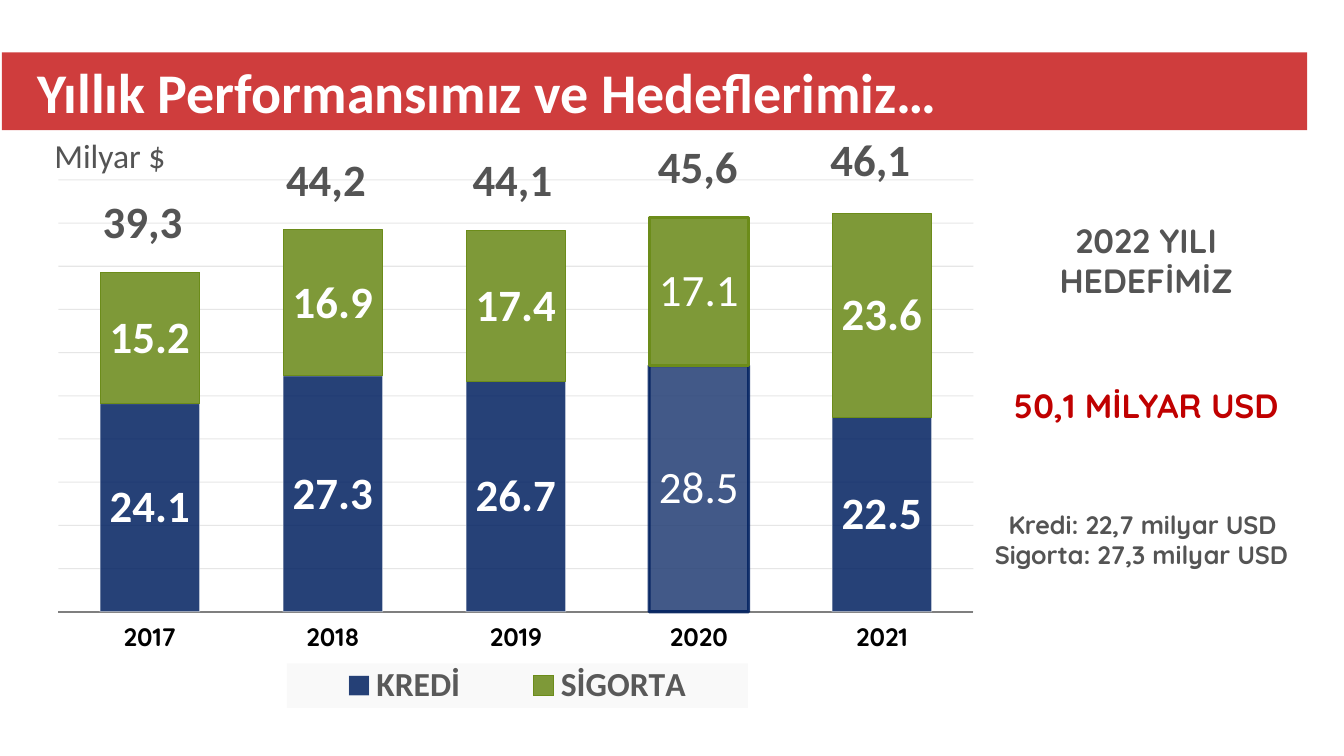
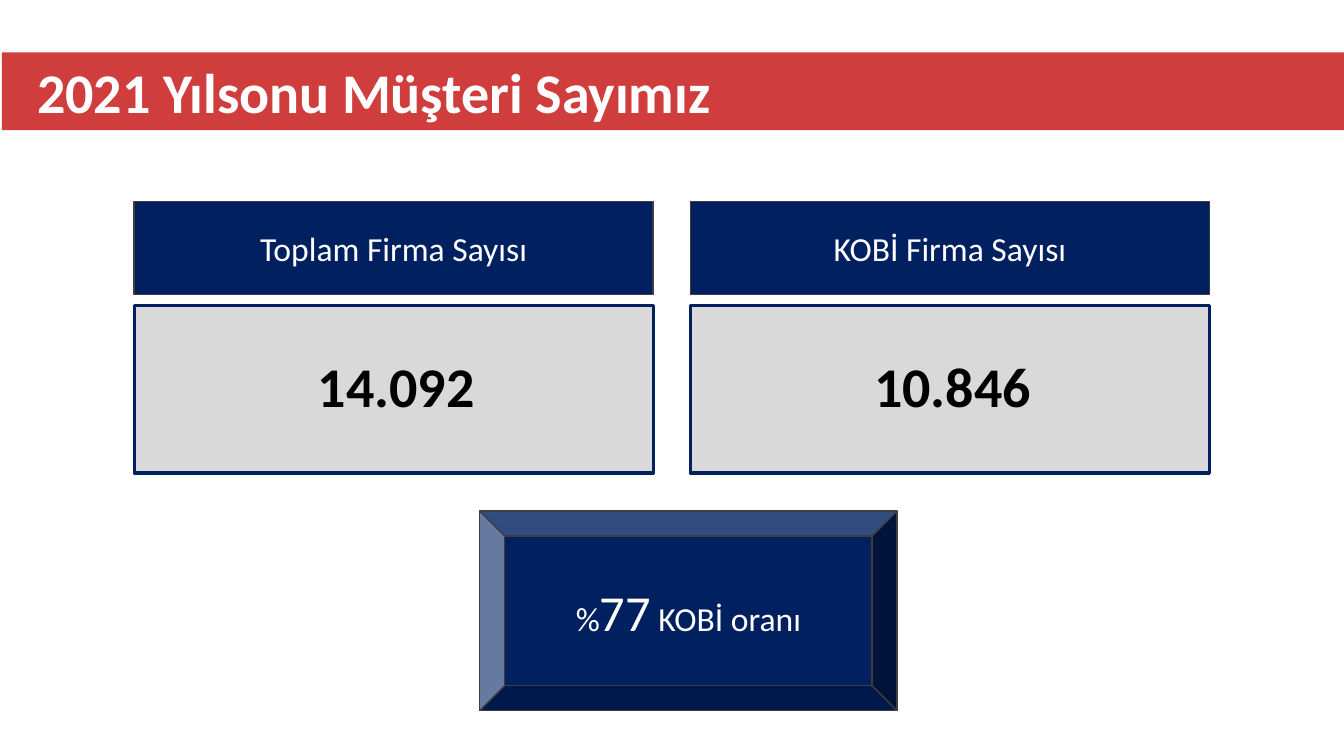
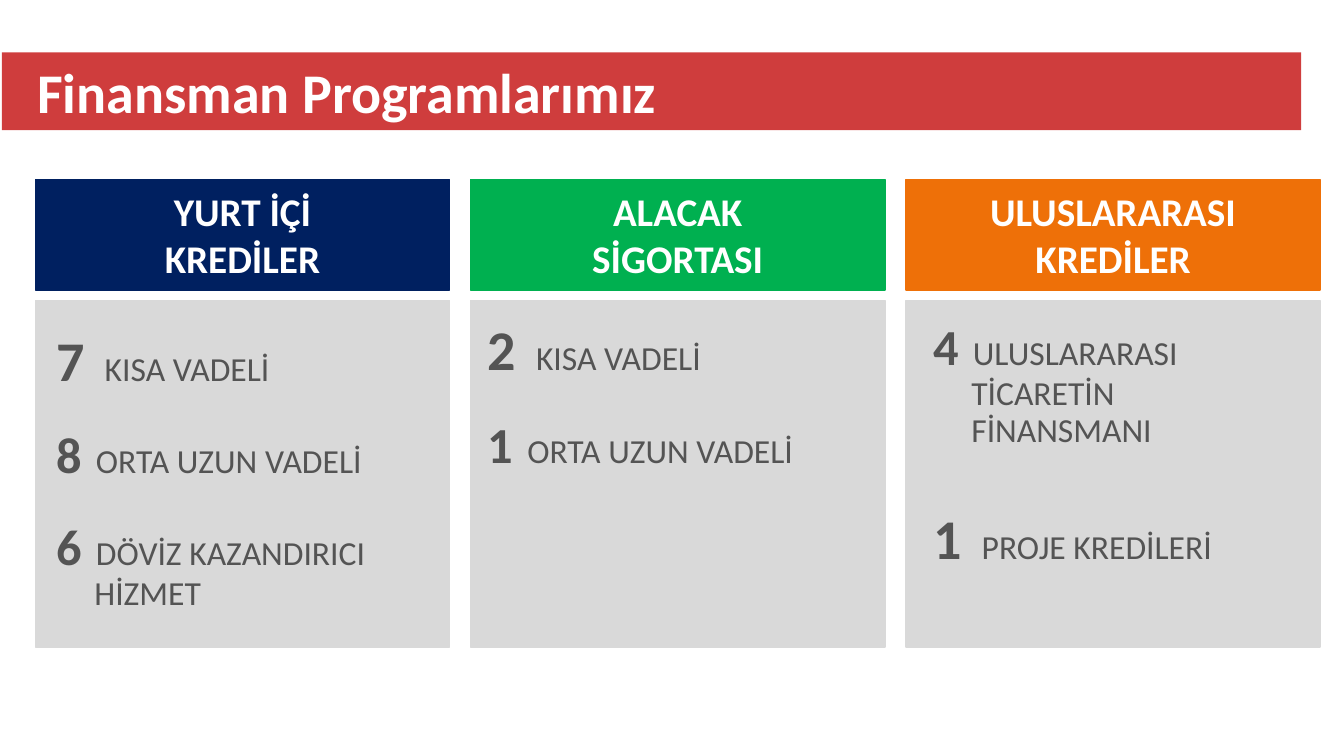
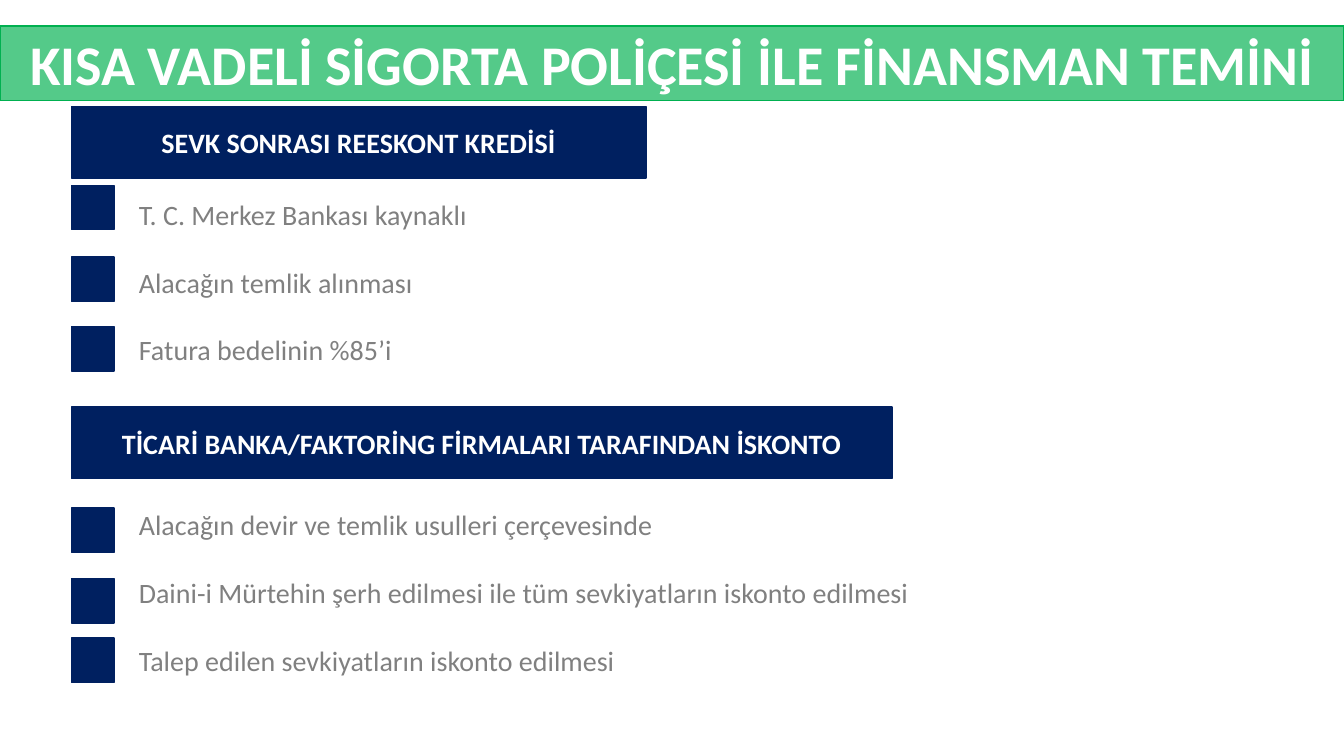
"""Build four slides on yearly results, customers, programmes and policy financing."""
from lxml.etree import SubElement
from pptx import Presentation
from pptx.chart.data import CategoryChartData
from pptx.dml.color import RGBColor
from pptx.enum.chart import (XL_CHART_TYPE, XL_LABEL_POSITION, XL_LEGEND_POSITION,
                             XL_TICK_LABEL_POSITION, XL_TICK_MARK)
from pptx.enum.shapes import MSO_SHAPE
from pptx.enum.text import MSO_ANCHOR, MSO_AUTO_SIZE, PP_ALIGN
from pptx.oxml import parse_xml
from pptx.oxml.ns import nsdecls, qn
from pptx.util import Cm, Pt

RED, NAVY, GREEN, ORANGE = "C00000", "002060", "00B050", "EE7008"
WHITE, BLACK, PALE, TEXT, GREY, EDGE = "FFFFFF", "000000", "D9D9D9", "545454", "808080", "3E3E3E"
BODY, ACCENT = "Calibri", "Quicksand"
TITLE_SIZE = 40

YEARS = ["2017", "2018", "2019", "2020", "2021"]
SERIES = [
    {"name": "KREDİ", "values": [24.1, 27.3, 26.7, 28.5, 22.5], "fill": (NAVY, 85),
     "line": (WHITE, 50), "point_fill": ("223D74", 85), "point_line": (NAVY, 85)},
    {"name": "SİGORTA", "values": [15.2, 16.9, 17.4, 17.1, 23.6], "fill": ("7E9938",),
     "line": ("6C8C1A",), "point_fill": ("7E9938",), "point_line": ("6C8C1A",)},
]
MARKED_YEAR = YEARS.index("2020")
TOTALS = [("39,3", 2.34, 4.9), ("44,2", 6.96, 3.84), ("44,1", 11.66, 3.84),
          ("45,6", 16.33, 3.53), ("46,1", 20.68, 3.35)]
GOAL = [
    {"text": "2022 YILI HEDEFİMİZ", "size": 24, "color": TEXT},
    {"text": "50,1 MİLYAR USD", "size": 24, "color": RED, "before": 60},
    {"text": "Kredi: 22,7 milyar USD", "size": 18, "color": TEXT, "before": 60,
     "align": PP_ALIGN.LEFT, "indent": 0.35},
    {"text": "Sigorta: 27,3 milyar USD", "size": 18, "color": TEXT, "align": PP_ALIGN.LEFT},
]
CUSTOMERS = [("Toplam Firma Sayısı", "14.092"), ("KOBİ Firma Sayısı", "10.846")]
SHARE = [("%", 24, False), ("77", 36, False), (" KOBİ oranı", 24, False)]
PROGRAMMES = [
    {"heading": ["YURT İÇİ", "KREDİLER"], "color": NAVY, "at": (1.17, 8.26), "gap": 26.4,
     "items": [("7", 40, ["KISA VADELİ"]), ("8", 36, ["ORTA UZUN VADELİ"]),
               ("6", 36, ["DÖVİZ KAZANDIRICI", "HİZMET"])]},
    {"heading": ["ALACAK", "SİGORTASI"], "color": GREEN, "at": (12.04, 8), "gap": 26.4,
     "items": [("2", 40, ["KISA VADELİ"]), ("1", 36, ["ORTA UZUN VADELİ"])]},
    {"heading": ["ULUSLARARASI KREDİLER"], "color": ORANGE, "at": (23.27, 8), "gap": 43.9,
     "items": [("4", 36, ["ULUSLARARASI", "TİCARETİN", "FİNANSMANI"]),
               ("1", 40, ["PROJE KREDİLERİ"])]},
]
TAB_BY_SIZE = {36: 1, 40: 1.22}
FINANCING = [
    {"heading": "SEVK SONRASI REESKONT KREDİSİ", "top": 2.69, "width": 14.48,
     "text_top": 4.85, "markers": [4.67, 6.48, 8.23],
     "lines": ["T. C. Merkez Bankası kaynaklı", "Alacağın temlik alınması",
               "Fatura bedelinin %85’i"]},
    {"heading": "TİCARİ BANKA/FAKTORİNG FİRMALARI TARAFINDAN İSKONTO", "top": 10.26,
     "width": 20.68, "text_top": 12.67, "markers": [12.8, 14.58, 16.08],
     "lines": ["Alacağın devir ve temlik usulleri çerçevesinde",
               "Daini-i Mürtehin şerh edilmesi ile tüm sevkiyatların iskonto edilmesi",
               "Talep edilen sevkiyatların iskonto edilmesi"]},
]


def paint(fill, color, alpha=None):
    fill.solid()
    fill.fore_color.rgb = RGBColor.from_string(color)
    if alpha:
        tone = fill._xPr.find(qn("a:solidFill"))[0]
        SubElement(tone, qn("a:alpha")).set("val", str(alpha * 1000))


def style_font(font, size, color, bold=False, name=BODY):
    font.name, font.bold = name, bold
    font.color.rgb = RGBColor.from_string(color)
    if size:
        font.size = Pt(size)


def write(frame, lines, size=None, color=WHITE, bold=False, name=BODY,
          align=PP_ALIGN.LEFT, spacing=1, gap=0):
    """Write strings or dicts as paragraphs; a dict may hold its own runs and settings."""
    frame.word_wrap = True
    for number, line in enumerate(lines):
        item = line if isinstance(line, dict) else {"text": line}
        para = frame.add_paragraph() if number else frame.paragraphs[0]
        para.alignment = item.get("align", align)
        para.line_spacing = spacing
        para.space_before = Pt(item.get("before", gap) if number else 0)
        properties = para._p.get_or_add_pPr()
        if "indent" in item:
            properties.set("marL", str(Cm(item["indent"])))
        if "tab" in item:
            stops = SubElement(properties, qn("a:tabLst"))
            stop = SubElement(stops, qn("a:tab"))
            stop.set("pos", str(Cm(item["tab"])))
            stop.set("algn", "l")
        runs = item.get("runs")
        style_font(para.font, None if runs else item.get("size", size),
                   item.get("color", color), bold, name)
        for text, run_size, run_bold in runs or []:
            span = para.add_run()
            span.text = text
            span.font.size, span.font.bold = Pt(run_size), run_bold
        if not runs:
            para.add_run().text = item["text"]


def add_box(page, left, top, width, height, fill, line=None, weight=1, kind=MSO_SHAPE.RECTANGLE):
    box = page.shapes.add_shape(kind, Cm(left), Cm(top), Cm(width), Cm(height))
    box.shadow.inherit = False
    paint(box.fill, fill)
    paint(box.line.fill, line or fill)
    box.line.width = Pt(weight)
    box.text_frame.vertical_anchor = MSO_ANCHOR.MIDDLE
    return box


def add_text(page, left, top, width, height, lines, **style):
    box = page.shapes.add_textbox(Cm(left), Cm(top), Cm(width), Cm(height))
    write(box.text_frame, lines, **style)


def add_page(deck, title, width, left=0.05, top=1.32, height=1.96,
             fill=(RED, 76), line=None, inset=0.89):
    page = deck.slides.add_slide(deck.slide_layouts[5])
    band = page.shapes.title
    band.left, band.top, band.width, band.height = Cm(left), Cm(top), Cm(width), Cm(height)
    paint(band.fill, *fill)
    if line:
        paint(band.line.fill, line)
        band.line.width = Pt(1)
    frame = band.text_frame
    frame.auto_size = MSO_AUTO_SIZE.NONE
    frame.vertical_anchor = MSO_ANCHOR.MIDDLE
    frame.margin_left, frame.margin_right = Cm(inset), 0
    write(frame, [title], size=TITLE_SIZE, bold=True)
    return page


def chart_layout(x, y, width, height, target=""):
    parts = [("xMode", "edge"), ("yMode", "edge"), ("x", x), ("y", y), ("w", width), ("h", height)]
    body = target + "".join(f'<c:{tag} val="{value}"/>' for tag, value in parts)
    return parse_xml(f'<c:layout {nsdecls("c")}><c:manualLayout>{body}</c:manualLayout></c:layout>')


def style_legend(chart):
    chart.has_legend = True
    legend = chart.legend
    legend.position = XL_LEGEND_POSITION.BOTTOM
    legend.include_in_layout = False
    style_font(legend.font, 24, "595959", True)
    element = legend._element
    for old in element.findall(qn("c:layout")):
        element.remove(old)
    element.find(qn("c:legendPos")).addnext(chart_layout(0.26, 0.87, 0.49, 0.08))
    element.find(qn("c:overlay")).addnext(parse_xml(
        f'<c:spPr {nsdecls("c", "a")}><a:solidFill><a:srgbClr val="F9F9F9"/></a:solidFill></c:spPr>'))


def style_axes(chart):
    values, years = chart.value_axis, chart.category_axis
    values.minimum_scale, values.maximum_scale, values.major_unit = 0, 50, 5
    values.visible = False
    values.has_major_gridlines = True
    grid = values.major_gridlines.format.line
    paint(grid.fill, "5D5D5D", 15)
    grid.width = Pt(0.75)
    years.major_tick_mark = years.minor_tick_mark = XL_TICK_MARK.NONE
    years.tick_label_position = XL_TICK_LABEL_POSITION.LOW
    style_font(years.tick_labels.font, 18, BLACK, True, ACCENT)
    paint(years.format.line.fill, "7F7F7F")
    years.format.line.width = Pt(1.5)


def style_series(series, look):
    point = series.points[MARKED_YEAR]
    for part, prefix, weight in ((series, "", 0.75), (point, "point_", 2.25)):
        paint(part.format.fill, *look[prefix + "fill"])
        paint(part.format.line.fill, *look[prefix + "line"])
        part.format.line.width = Pt(weight)
    labels = series.data_labels
    labels.show_value = True
    labels.number_format, labels.number_format_is_linked = "0.0", False
    labels.position = XL_LABEL_POSITION.CENTER
    style_font(labels.font, 32, WHITE, True)
    style_font(point.data_label.font, 32, WHITE)
    point.data_label.position = XL_LABEL_POSITION.CENTER


def add_results_chart(page):
    data = CategoryChartData(number_format="0.0")
    data.categories = YEARS
    for look in SERIES:
        data.add_series(look["name"], look["values"])
    chart = page.shapes.add_chart(XL_CHART_TYPE.COLUMN_STACKED, Cm(1.07), Cm(4.52),
                                  Cm(23.7), Cm(14.02), data).chart
    chart.has_title = False
    style_font(chart.font, 10, TEXT, name=ACCENT)
    plot = chart.plots[0]
    plot.gap_width, plot.overlap, plot.vary_by_categories = 84, 100, False
    for series, look in zip(plot.series, SERIES):
        style_series(series, look)
    style_axes(chart)
    style_legend(chart)
    area = chart._chartSpace.chart.plotArea
    for old in area.findall(qn("c:layout")):
        area.remove(old)
    area.insert(0, chart_layout(0.017, 0, 0.973, 0.777, '<c:layoutTarget val="inner"/>'))


def build_results(deck):
    page = add_page(deck, "Yıllık Performansımız ve Hedeflerimiz…", 32.89)
    add_results_chart(page)
    add_text(page, 1.12, 3.38, 3.99, 1.17, ["Milyar $"], size=24, color=TEXT, spacing=0.9)
    for total, left, top in TOTALS:
        add_text(page, left, top, 2.74, 1.5, [total], size=32, color=TEXT, bold=True, spacing=0.9)
    goal = add_box(page, 24.82, 4.42, 8.13, 11.05, WHITE)
    write(goal.text_frame, GOAL, bold=True, name=ACCENT, align=PP_ALIGN.CENTER)


def build_customers(deck):
    page = add_page(deck, "2021 Yılsonu Müşteri Sayımız", 33.83)
    for column, (label, count) in enumerate(CUSTOMERS):
        left = 3.38 + 14.02 * column
        heading = add_box(page, left, 5.08, 13.08, 2.34, NAVY, EDGE)
        write(heading.text_frame, [label], size=24, align=PP_ALIGN.CENTER)
        panel = add_box(page, left, 7.7, 13.08, 4.22, PALE, NAVY, 2.25)
        write(panel.text_frame, [{"text": count, "indent": 0.13}], size=40, color=BLACK,
              bold=True, align=PP_ALIGN.CENTER, spacing=0.9)
    share = add_box(page, 12.09, 12.88, 10.52, 5.03, NAVY, EDGE, kind=MSO_SHAPE.BEVEL)
    write(share.text_frame, [{"runs": SHARE}], align=PP_ALIGN.CENTER)


def programme_lines(items, gap):
    lines = []
    for count, size, (first, *rest) in items:
        lines.append({"runs": [(count, size, True), ("\t" + first, 24, False)],
                      "tab": TAB_BY_SIZE[size], "before": gap})
        lines += [{"text": text, "size": 24, "indent": 0.96} for text in rest]
    return lines


def build_programmes(deck):
    page = add_page(deck, "Finansman Programlarımız", 32.74)
    for column, programme in enumerate(PROGRAMMES):
        left = 0.89 + 10.97 * column
        heading = add_box(page, left, 4.52, 10.44, 2.79, programme["color"])
        write(heading.text_frame, programme["heading"], size=28, bold=True, align=PP_ALIGN.CENTER)
        add_box(page, left, 7.57, 10.44, 8.74, PALE)
        add_text(page, *programme["at"], 10, 7.3,
                 programme_lines(programme["items"], programme["gap"]), color=TEXT, spacing=0.9)


def build_financing(deck):
    page = add_page(deck, "KISA VADELİ SİGORTA POLİÇESİ İLE FİNANSMAN TEMİNİ", 33.87, left=0,
                    top=0.66, height=1.88, fill=(GREEN, 67), line=GREEN, inset=0.76)
    for section in FINANCING:
        heading = add_box(page, 1.8, section["top"], section["width"], 1.8, NAVY)
        write(heading.text_frame, [section["heading"]], size=20, bold=True, align=PP_ALIGN.CENTER)
        for top in section["markers"]:
            add_box(page, 1.8, top, 1.07, 1.12, NAVY)
        add_text(page, 3.25, section["text_top"], 26.72, 6.1, section["lines"],
                 size=20, color=GREY, gap=24.4)


def main():
    deck = Presentation()
    deck.slide_width, deck.slide_height = Cm(33.87), Cm(19.05)
    for build in (build_results, build_customers, build_programmes, build_financing):
        build(deck)
    deck.save("out.pptx")


if __name__ == "__main__":
    main()
